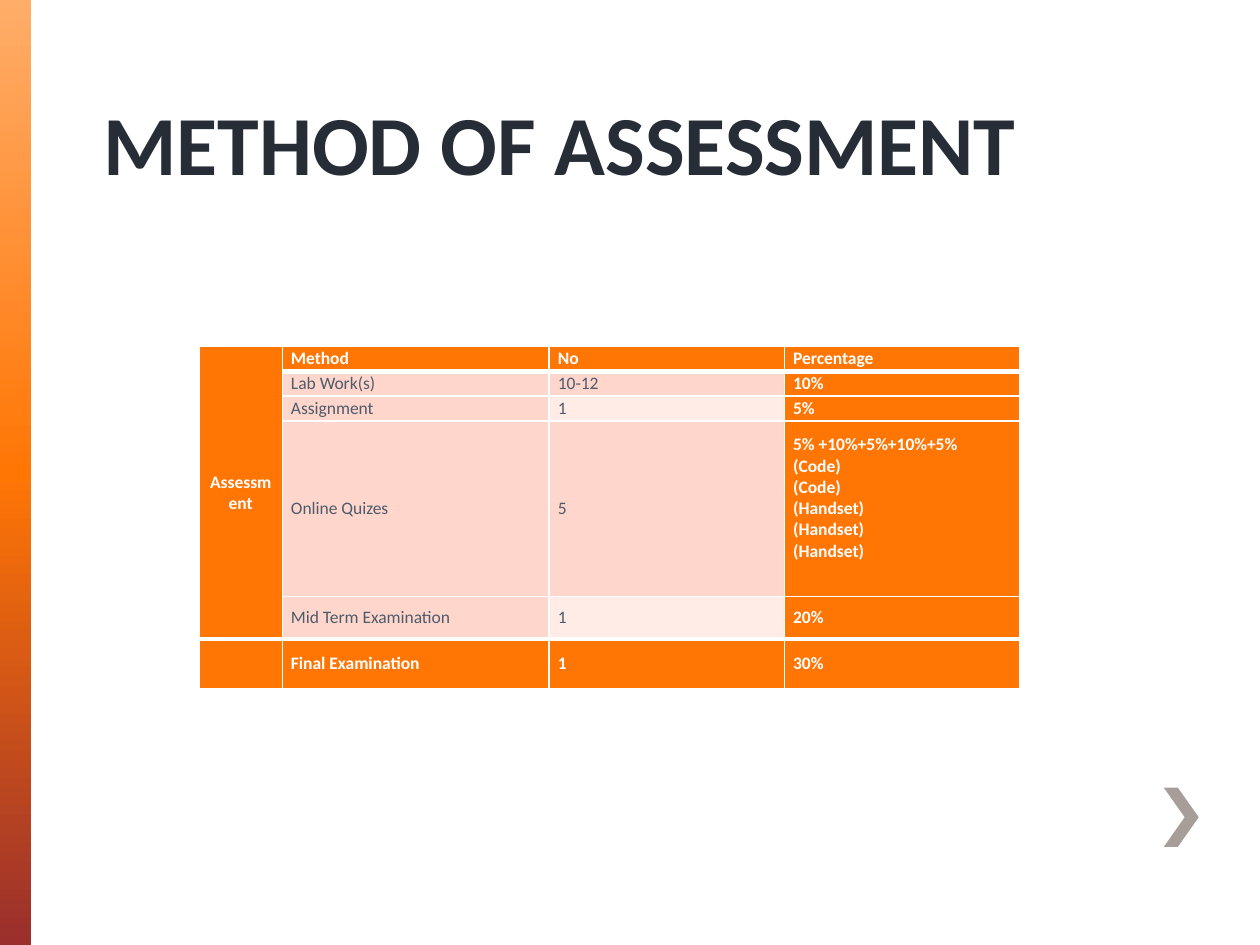
from copy import deepcopy
from lxml.etree import SubElement
from pptx import Presentation
from pptx.dml.color import RGBColor
from pptx.enum.shapes import MSO_SHAPE
from pptx.enum.text import MSO_ANCHOR, MSO_AUTO_SIZE, PP_ALIGN
from pptx.oxml.ns import qn
from pptx.util import Pt

# Content
TITLE = "METHOD OF ASSESSMENT"
SIDE = "Assessment"
ROWS = [
    ("Method", "No", "Percentage"),
    ("Lab Work(s)", "10-12", "10%"),
    ("Assignment", "1", "5%"),
    ("Online Quizes", "5",
     "5% +10%+5%+10%+5%\n(Code)\n(Code)\n(Handset)\n(Handset)\n(Handset)"),
    ("Mid Term Examination", "1", "20%"),
    ("Final Examination", "1", "30%"),
]

# Layout in points
WIDE, HIGH = 720, 540
LEFT, TOP = 113.8, 198
COLS = [47.5, 152.5, 134.5, 134.5]
TALL = [14.2, 14.2, 14.2, 100.4, 24.2, 28.3]
LAST = len(ROWS) - 1
QUIZ = 3
ARROW = [(673, 450), (665, 450), (677, 467), (665, 484), (673, 484), (685, 467)]


class Theme:
    font = "Calibri"
    head, body = 48, 10
    dark, text, white = "262D36", "4D5B6B", "FFFFFF"
    main, band, pale = "FF7605", "FFD6CC", "FFECE7"
    arrow = "A79D99"
    fade = [(0, "FFAD69"), (50, "FF7605"), (100, "9A2F2C")]
    thin, thick = 1, 3


def rgb(code):
    return RGBColor.from_string(code)


def style(para, size, color, bold):
    for run in para.runs:
        font = run.font
        font.name, font.size, font.bold = Theme.font, Pt(size), bold
        font.color.rgb = rgb(color)


def border(cell, row):
    """Draw white edges, thick below the header and above the last row."""
    props = cell._tc.get_or_add_tcPr()
    wide = {"lnT": row in (1, LAST), "lnB": row in (0, LAST - 1)}
    for spot, side in enumerate(("lnL", "lnR", "lnT", "lnB")):
        width = Theme.thick if wide.get(side) else Theme.thin
        line = SubElement(props, qn("a:" + side), w=str(Pt(width)))
        fill = SubElement(line, qn("a:solidFill"))
        SubElement(fill, qn("a:srgbClr"), val=Theme.white)
        props.insert(spot, line)


def shade(row, col):
    if row in (0, LAST) or col in (0, 3):
        return Theme.main
    return Theme.pale if col == 2 and row % 2 == 0 else Theme.band


def write(cell, text, fill):
    cell.text_frame.text = text
    strong = fill == Theme.main
    for para in cell.text_frame.paragraphs:
        if not text:
            para.font.size = Pt(Theme.body)
        style(para, Theme.body, Theme.white if strong else Theme.text, strong)


deck = Presentation()
deck.slide_width, deck.slide_height = Pt(WIDE), Pt(HIGH)
slide = deck.slides.add_slide(deck.slide_layouts[5])
shapes = slide.shapes

# Gradient bar on the left edge
bar = shapes.add_shape(MSO_SHAPE.RECTANGLE, 0, 0, Pt(18), Pt(HIGH))
bar.shadow.inherit = False
bar.line.fill.background()
bar.fill.gradient()
bar.fill.gradient_angle = 270
stops = bar._element.spPr.find(qn("a:gradFill")).find(qn("a:gsLst"))
stops.insert(1, deepcopy(stops[0]))
for stop, (place, code) in zip(bar.fill.gradient_stops, Theme.fade):
    stop.position = place / 100
    stop.color.rgb = rgb(code)

# Arrow at the lower right
path = shapes.build_freeform(*ARROW[0], scale=Pt(1))
path.add_line_segments(ARROW[1:], close=True)
arrow = path.convert_to_shape()
arrow.shadow.inherit = False
arrow.fill.solid()
arrow.fill.fore_color.rgb = rgb(Theme.arrow)
arrow.line.fill.background()

# Title
title = shapes.title
title.left, title.top, title.width, title.height = Pt(54), Pt(36), Pt(613.5), Pt(75)
frame = title.text_frame
frame.text = TITLE
frame.auto_size = MSO_AUTO_SIZE.NONE
frame.word_wrap = True
frame.vertical_anchor = MSO_ANCHOR.BOTTOM
frame.margin_left, frame.margin_bottom = Pt(5), Pt(1)
frame.paragraphs[0].alignment = PP_ALIGN.LEFT
style(frame.paragraphs[0], Theme.head, Theme.dark, True)

# Assessment table
table = shapes.add_table(len(ROWS), len(COLS), Pt(LEFT), Pt(TOP),
                         Pt(sum(COLS)), Pt(sum(TALL))).table
table.first_row = table.horz_banding = False
for col, width in zip(table.columns, COLS):
    col.width = Pt(width)
for row, height in zip(table.rows, TALL):
    row.height = Pt(height)

for r, words in enumerate(ROWS):
    for c, text in enumerate((SIDE if r == 0 else "",) + words):
        cell = table.cell(r, c)
        cell.vertical_anchor = MSO_ANCHOR.MIDDLE
        cell.margin_left = cell.margin_right = Pt(5)
        cell.margin_top = cell.margin_bottom = 0
        fill = shade(r, c)
        cell.fill.solid()
        cell.fill.fore_color.rgb = rgb(fill)
        border(cell, LAST - 1 if c == 0 and r == 0 else r)
        write(cell, text, fill)

# Quiz shares sit one line above the middle; the side label spans its rows
table.cell(QUIZ, 3).margin_bottom = Pt(12.2)
side = table.cell(0, 0)
side.merge(table.cell(LAST - 1, 0))
side.text_frame.paragraphs[0].alignment = PP_ALIGN.CENTER

deck.save("out.pptx")
